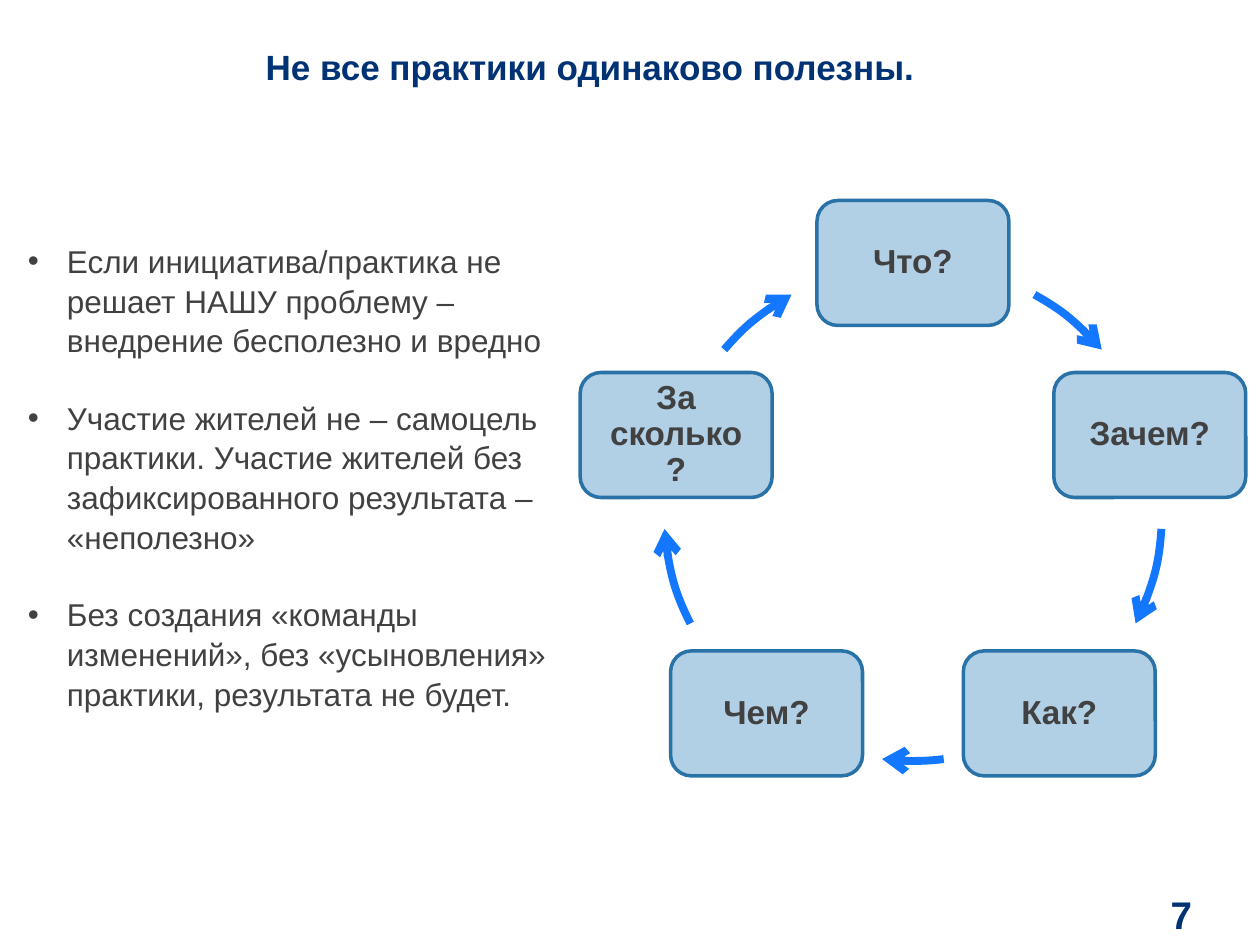
from math import cos, radians, sin

from lxml.etree import SubElement
from pptx import Presentation
from pptx.dml.color import RGBColor
from pptx.enum.shapes import MSO_SHAPE
from pptx.enum.text import MSO_ANCHOR, PP_ALIGN
from pptx.oxml.ns import qn
from pptx.util import Pt

TITLE = "Не все практики одинаково полезны."
PAGE_NUMBER = "7"
POINTS = [
    "Если инициатива/практика не решает НАШУ проблему – внедрение бесполезно и вредно",
    "Участие жителей не – самоцель практики. Участие жителей без зафиксированного "
    "результата – «неполезно»",
    "Без создания «команды изменений», без «усыновления» практики, результата не будет.",
]
QUESTIONS = ["Что?", "Зачем?", "Как?", "Чем?", "За сколько?"]
ARROW_ANGLES = [(299.2, 319.3), (3.9, 26.6), (82.9, 97.1), (153.4, 176.1), (220.7, 240.8)]

COLORS = {
    "navy": "003274",
    "text": "414142",
    "box": "B1CFE5",
    "border": "2972A7",
    "arrow": "1378FF",
}
FORMATS = {
    "title": {"size": Pt(20), "bold": True, "color": "navy"},
    "number": {"size": Pt(22), "bold": True, "color": "navy"},
    "point": {"size": Pt(18), "bold": False, "color": "text"},
    "question": {"size": Pt(19), "bold": True, "color": "text"},
}

PX = 914400 / 126
CENTER_X, CENTER_Y, RADIUS = 913, 512, 249
BOX_WIDTH, BOX_HEIGHT = 192, 125
INDENT = 39


def px(*lengths):
    return [round(length * PX) for length in lengths]


def color(name):
    return RGBColor.from_string(COLORS[name])


def style(font, format_name):
    font.name = "Arial"
    for key, value in FORMATS[format_name].items():
        if key == "color":
            font.color.rgb = color(value)
        else:
            setattr(font, key, value)


def set_frame(frame, margins, anchor):
    frame.word_wrap = True
    frame.vertical_anchor = anchor
    for side, margin in zip(("left", "top", "right", "bottom"), px(*margins)):
        setattr(frame, f"margin_{side}", margin)


def write(para, text, format_name, align):
    para.alignment = align
    span = para.add_run()
    span.text = text
    style(span.font, format_name)
    return span


def add_text(page, place, margins, anchor):
    frame = page.shapes.add_textbox(*px(*place)).text_frame
    set_frame(frame, margins, anchor)
    return frame


def add_points(page):
    frame = add_text(page, (15, 234, 556, 471), (13, 6, 13, 6), MSO_ANCHOR.TOP)
    for index, text in enumerate(POINTS):
        para = frame.paragraphs[0] if index == 0 else frame.add_paragraph()
        para.line_spacing = 1.05
        if index:
            para.space_before = Pt(21.6)
        properties = para._p.get_or_add_pPr()
        indent, = px(INDENT)
        properties.set("marL", str(indent))
        properties.set("indent", str(-indent))
        SubElement(properties, qn("a:buFont"), typeface="Arial")
        SubElement(properties, qn("a:buChar"), char="•")
        write(para, text, "point", PP_ALIGN.LEFT)


def add_question(page, index, text):
    angle = radians(-90 + index * 360 / len(QUESTIONS))
    left = CENTER_X + RADIUS * cos(angle) - BOX_WIDTH / 2
    top = CENTER_Y + RADIUS * sin(angle) - BOX_HEIGHT / 2
    box = page.shapes.add_shape(
        MSO_SHAPE.ROUNDED_RECTANGLE, *px(left, top, BOX_WIDTH, BOX_HEIGHT)
    )
    box.shadow.inherit = False
    box.fill.solid()
    box.fill.fore_color.rgb = color("box")
    box.line.color.rgb = color("border")
    box.line.width = Pt(2)
    set_frame(box.text_frame, (16, 16, 16, 16), MSO_ANCHOR.MIDDLE)
    para = box.text_frame.paragraphs[0]
    para.line_spacing = 0.9
    write(para, text, "question", PP_ALIGN.CENTER)


def add_arrow(page, angles):
    arc = page.shapes.add_shape(
        MSO_SHAPE.ARC,
        *px(CENTER_X - RADIUS, CENTER_Y - RADIUS, 2 * RADIUS, 2 * RADIUS),
    )
    for index, angle in enumerate(angles):
        arc.adjustments[index] = angle * 0.6
    arc.shadow.inherit = False
    arc.fill.background()
    arc.line.color.rgb = color("arrow")
    arc.line.width = Pt(4.5)
    SubElement(arc.line._get_or_add_ln(), qn("a:tailEnd"), type="arrow")


def add_number(page):
    frame = add_text(page, (1138, 888, 87, 52), (0, 0, 33, 0), MSO_ANCHOR.MIDDLE)
    span = write(frame.paragraphs[0], PAGE_NUMBER, "number", PP_ALIGN.RIGHT)
    effects = span._r.get_or_add_rPr().find(qn("a:solidFill"))
    effect_list = SubElement(span._r.rPr, qn("a:effectLst"))
    effects.addnext(effect_list)
    shadow = SubElement(
        effect_list, qn("a:outerShdw"), blurRad="38100", dist="38100", dir="2700000"
    )
    tint = SubElement(shadow, qn("a:srgbClr"), val="000000")
    SubElement(tint, qn("a:alpha"), val="43000")


def main():
    deck = Presentation()
    deck.slide_width, deck.slide_height = px(1260, 945)
    page = deck.slides.add_slide(deck.slide_layouts[6])
    title = add_text(page, (64, 0, 1052, 132), (0, 0, 0, 0), MSO_ANCHOR.MIDDLE)
    write(title.paragraphs[0], TITLE, "title", PP_ALIGN.CENTER)
    add_number(page)
    for index, (question, angles) in enumerate(zip(QUESTIONS, ARROW_ANGLES)):
        add_question(page, index, question)
        add_arrow(page, angles)
    add_points(page)
    deck.save("out.pptx")


if __name__ == "__main__":
    main()
